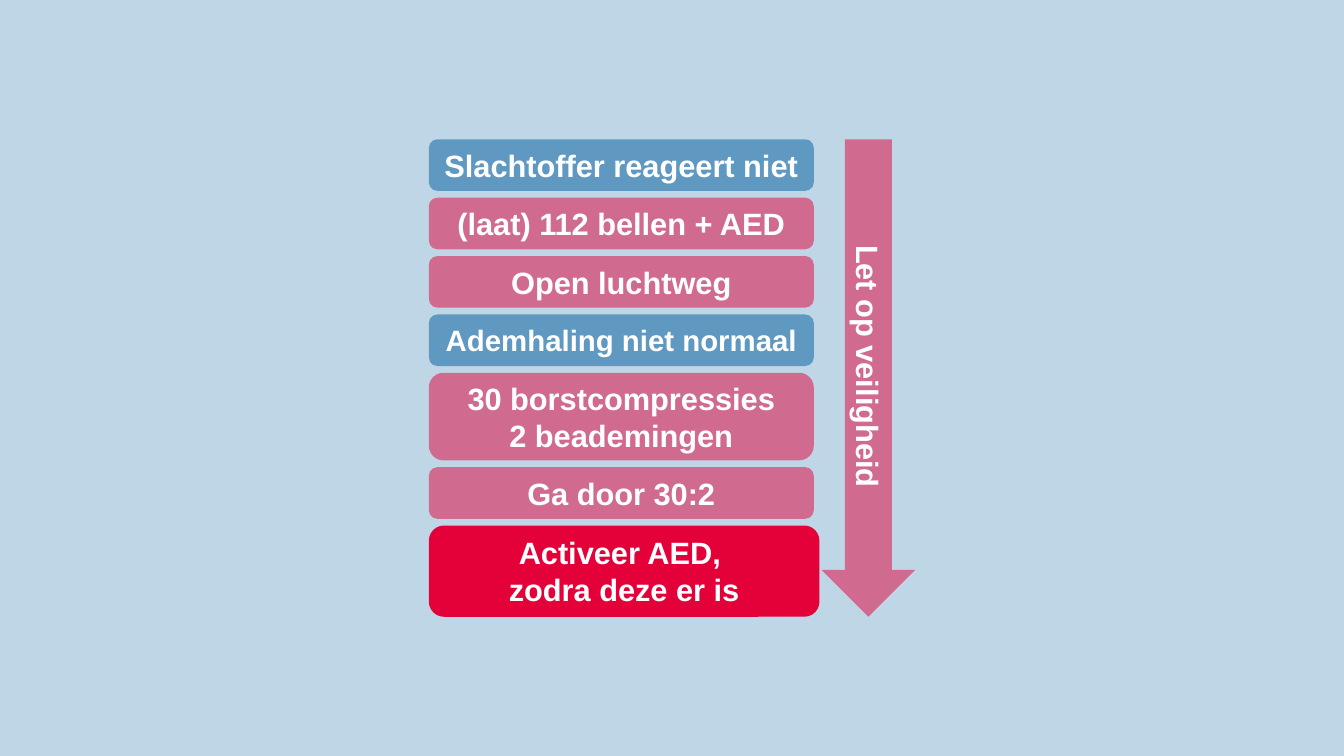
import pptx
import pptx.dml.color
import pptx.enum.shapes
import pptx.enum.text
import pptx.oxml.ns
import pptx.util
import lxml.etree

Pt = pptx.util.Pt
SHAPES = pptx.enum.shapes.MSO_SHAPE
RED, BLUE, WHITE, PALE_BLUE = "E40038", "005D9F", "FFFFFF", "BFD6E7"


def color(value):
    return pptx.dml.color.RGBColor.from_string(value)


def add_block(text, left, top, width, height, fill=RED, opacity=50, size=22,
              kind=SHAPES.ROUNDED_RECTANGLE, vertical=False):
    box = page.shapes.add_shape(kind, Pt(left), Pt(top), Pt(width), Pt(height))
    box.shadow.inherit = False
    box.line.fill.background()
    box.fill.solid()
    box.fill.fore_color.rgb = color(fill)
    if opacity < 100:
        fill_color = box.fill._xPr.find(".//" + pptx.oxml.ns.qn("a:srgbClr"))
        alpha = lxml.etree.SubElement(fill_color, pptx.oxml.ns.qn("a:alpha"))
        alpha.set("val", str(opacity * 1000))
    frame = box.text_frame
    frame.word_wrap = True
    frame.vertical_anchor = pptx.enum.text.MSO_ANCHOR.MIDDLE
    if vertical:
        frame._txBody.bodyPr.set("vert", "vert")
    frame.text = text
    for para in frame.paragraphs:
        para.alignment = pptx.enum.text.PP_ALIGN.CENTER
        for span in para.runs:
            span.font.name = "Arial"
            span.font.size = Pt(size)
            span.font.bold = True
            span.font.color.rgb = color(WHITE)


deck = pptx.Presentation()
deck.slide_width, deck.slide_height = Pt(960), Pt(540)
page = deck.slides.add_slide(deck.slide_layouts[6])
page.background.fill.solid()
page.background.fill.fore_color.rgb = color(PALE_BLUE)

left, first_top, gap = 306.3, 99.5, 4.8
width, height = 275, 36.9
steps = [
    ("Slachtoffer reageert niet", {"fill": BLUE}),
    ("(laat) 112 bellen + AED", {}),
    ("Open luchtweg", {}),
    ("Ademhaling niet normaal", {"fill": BLUE, "size": 21}),
    ("30 borstcompressies\n2 beademingen", {"height": 62.6}),
    ("Ga door 30:2", {}),
    ("Activeer AED, \nzodra deze er is", {"width": 279, "height": 65.2, "opacity": 100}),
]

top = first_top
for text, changes in steps:
    block = {"width": width, "height": height, **changes}
    add_block(text, left, top, **block)
    top += block["height"] + gap

add_block("Let op veiligheid", 586.8, first_top, 67, top - gap - first_top,
          kind=SHAPES.DOWN_ARROW, vertical=True)

deck.save("out.pptx")
